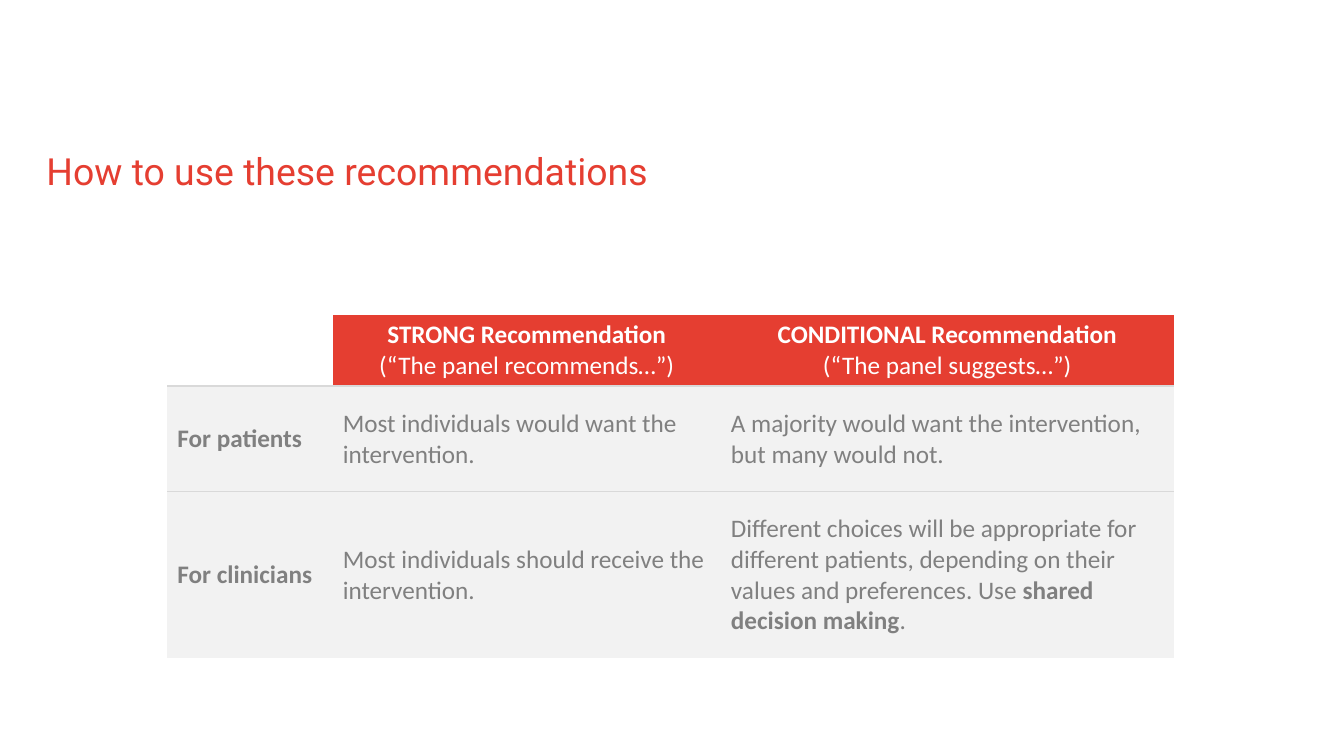
from dataclasses import dataclass

from lxml.etree import SubElement
from pptx import Presentation
from pptx.dml.color import RGBColor
from pptx.enum.text import MSO_ANCHOR, PP_ALIGN
from pptx.oxml.ns import qn
from pptx.util import Inches, Pt


@dataclass(frozen=True)
class Theme:
    red: str = "E53E31"
    white: str = "FFFFFF"
    grey: str = "808080"
    panel: str = "F2F2F2"
    rule: str = "D9D9D9"
    title_font: str = "Roboto"
    body_font: str = "Calibri"
    title_size: float = 26.7
    body_size: float = 18


THEME = Theme()
NO_STYLE = "{2D5ABB26-0587-4C30-8999-92F81FD0307C}"
COL_WIDTHS = (1.64, 3.85, 4.49)
ROW_HEIGHTS = (0.71, 1.05, 1.65)

# Each cell is a list of paragraphs, each paragraph a list of (text, bold) runs.
HEADER = [
    [],
    [[("STRONG Recommendation", True)], [("(“The panel recommends…”)", False)]],
    [[("CONDITIONAL Recommendation", True)], [("(“The panel suggests…”)", False)]],
]
BODY = [
    [
        [[("For patients", True)]],
        [[("Most individuals would want the intervention.", False)]],
        [[("A majority would want the intervention, but many would not.", False)]],
    ],
    [
        [[("For clinicians", True)]],
        [[("Most individuals should receive the intervention.", False)]],
        [[("Different choices will be appropriate for different patients, "
           "depending on their values and preferences. Use ", False),
          ("shared decision making", True), (".", False)]],
    ],
]


def set_font(p, name, size, color):
    p.font.name = name
    p.font.size = Pt(size)
    p.font.color.rgb = RGBColor.from_string(color)


def add_title(s, text):
    tf = s.shapes.add_textbox(Inches(0.46), Inches(1.47), Inches(12), Inches(0.78)).text_frame
    tf.word_wrap = True
    tf.margin_left = tf.margin_top = 0
    tf.margin_right, tf.margin_bottom = Inches(0.1), Inches(0.05)
    p = tf.paragraphs[0]
    p.text = text
    set_font(p, THEME.title_font, THEME.title_size, THEME.red)


def add_rules(cell, sides):
    """Draw thin lines on the given sides; call before the cell is filled."""
    tc_pr = cell._tc.get_or_add_tcPr()
    for side in sides:
        ln = SubElement(tc_pr, qn(f"a:ln{side}"), w=str(Pt(1)))
        fill = SubElement(ln, qn("a:solidFill"))
        SubElement(fill, qn("a:srgbClr"), val=THEME.rule)


def fill_cell(cell, paragraphs, fill, color, align):
    cell.vertical_anchor = MSO_ANCHOR.MIDDLE
    cell.fill.solid()
    cell.fill.fore_color.rgb = RGBColor.from_string(fill)
    tf = cell.text_frame
    for i, runs in enumerate(paragraphs):
        p = tf.add_paragraph() if i else tf.paragraphs[0]
        p.alignment = align
        set_font(p, THEME.body_font, THEME.body_size, color)
        for text, bold in runs:
            r = p.add_run()
            r.text = text
            r.font.bold = bold


def add_recommendation_table(s):
    table = s.shapes.add_table(
        len(ROW_HEIGHTS), len(COL_WIDTHS), Inches(1.66), Inches(3.12),
        Inches(sum(COL_WIDTHS)), Inches(sum(ROW_HEIGHTS))).table
    table._tbl.tblPr.find(qn("a:tableStyleId")).text = NO_STYLE
    table.horz_banding = False
    for col, width in zip(table.columns, COL_WIDTHS):
        col.width = Inches(width)
    for row, height in zip(table.rows, ROW_HEIGHTS):
        row.height = Inches(height)

    add_rules(table.cell(0, 0), "B")
    for c, paragraphs in enumerate(HEADER):
        if paragraphs:
            fill_cell(table.cell(0, c), paragraphs, THEME.red, THEME.white, PP_ALIGN.CENTER)
    for r, row in enumerate(BODY, start=1):
        for c, paragraphs in enumerate(row):
            cell = table.cell(r, c)
            add_rules(cell, "TB" if r < len(BODY) else "T")
            fill_cell(cell, paragraphs, THEME.panel, THEME.grey, PP_ALIGN.LEFT)


def main():
    prs = Presentation()
    prs.slide_width, prs.slide_height = Inches(13.33), Inches(7.5)
    s = prs.slides.add_slide(prs.slide_layouts[6])
    add_title(s, "How to use these recommendations")
    add_recommendation_table(s)
    prs.save("out.pptx")


if __name__ == "__main__":
    main()
